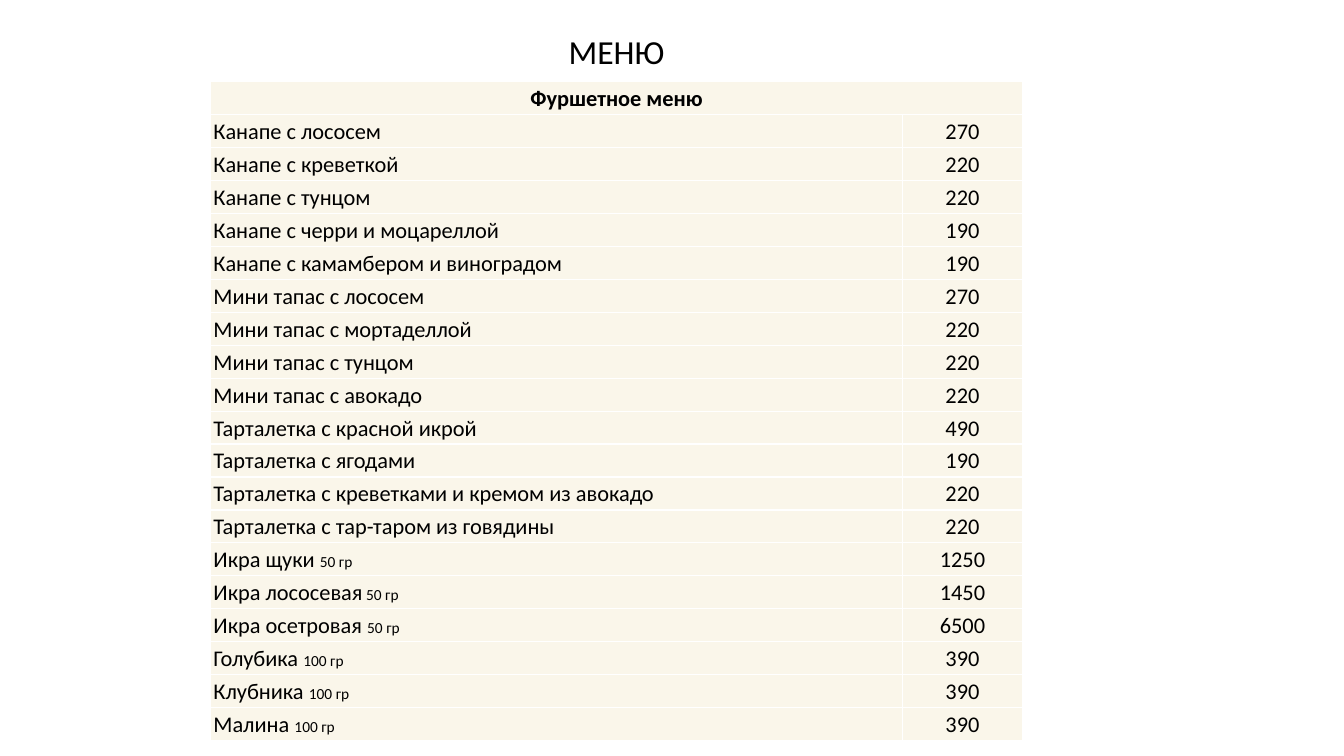
from lxml import etree
from pptx import Presentation
from pptx.dml.color import RGBColor
from pptx.enum.text import MSO_ANCHOR, MSO_AUTO_SIZE, PP_ALIGN
from pptx.oxml.ns import qn
from pptx.util import Cm, Pt

TITLE = "МЕНЮ"
HEADING = "Фуршетное меню"
DISHES = [
    ("Канапе с лососем", "", "270"),
    ("Канапе с креветкой", "", "220"),
    ("Канапе с тунцом", "", "220"),
    ("Канапе с черри и моцареллой", "", "190"),
    ("Канапе с камамбером и виноградом", "", "190"),
    ("Мини тапас с лососем", "", "270"),
    ("Мини тапас с мортаделлой", "", "220"),
    ("Мини тапас с тунцом", "", "220"),
    ("Мини тапас с авокадо", "", "220"),
    ("Тарталетка с красной икрой", "", "490"),
    ("Тарталетка с ягодами", "", "190"),
    ("Тарталетка с креветками и кремом из авокадо", "", "220"),
    ("Тарталетка с тар-таром из говядины", "", "220"),
    ("Икра щуки ", "50 гр", "1250"),
    ("Икра лососевая", " 50 гр", "1450"),
    ("Икра осетровая ", "50 гр", "6500"),
    ("Голубика ", "100 гр", "390"),
    ("Клубника ", "100 гр", "390"),
    ("Малина ", "100 гр", "390"),
]

FONT = "Calibri"
BLACK = RGBColor(0x00, 0x00, 0x00)
WHITE = RGBColor(0xFF, 0xFF, 0xFF)
CREAM = RGBColor(0xFA, 0xF6, 0xEA)
LEFT, CENTER = PP_ALIGN.LEFT, PP_ALIGN.CENTER
TOP, BOTTOM = MSO_ANCHOR.TOP, MSO_ANCHOR.BOTTOM
NO_AUTOFIT = MSO_AUTO_SIZE.NONE
TITLE_ONLY_LAYOUT = 5
COLUMN_WIDTHS = (Cm(17.43), Cm(3.03))
ROW_HEIGHT = Cm(0.83)


def add_run(paragraph, text, size, bold=False):
    run = paragraph.add_run()
    run.text = text
    run.font.name = FONT
    run.font.size = Pt(size)
    run.font.bold = bold
    run.font.color.rgb = BLACK


def add_borders(cell):
    properties = cell._tc.get_or_add_tcPr()
    for side in ("a:lnL", "a:lnR", "a:lnT", "a:lnB"):
        line = etree.SubElement(properties, qn(side), w=str(Pt(1)))
        fill = etree.SubElement(line, qn("a:solidFill"))
        etree.SubElement(fill, qn("a:srgbClr"), val=str(WHITE))


def fill_cell(cell, runs, alignment):
    cell.vertical_anchor = BOTTOM
    cell.margin_left = cell.margin_right = Cm(0.07)
    cell.margin_top = cell.margin_bottom = Cm(0.05)
    add_borders(cell)
    cell.fill.solid()
    cell.fill.fore_color.rgb = CREAM
    paragraph = cell.text_frame.paragraphs[0]
    paragraph.alignment = alignment
    for text, size, bold in runs:
        if text:
            add_run(paragraph, text, size, bold)


def add_title(slide):
    title = slide.shapes.title
    title.left, title.top, title.width, title.height = Cm(12.88), Cm(0.66), Cm(5.31), Cm(1.27)
    frame = title.text_frame
    frame.word_wrap = True
    frame.auto_size = NO_AUTOFIT
    frame.vertical_anchor = TOP
    paragraph = frame.paragraphs[0]
    paragraph.alignment = CENTER
    add_run(paragraph, TITLE, 24)


def add_menu(slide):
    row_count = len(DISHES) + 1
    table = slide.shapes.add_table(
        row_count, 2, Cm(5.31), Cm(2.06), sum(COLUMN_WIDTHS), ROW_HEIGHT * row_count
    ).table
    table.first_row = False
    table.horz_banding = False
    for column, width in zip(table.columns, COLUMN_WIDTHS):
        column.width = width
    for row in table.rows:
        row.height = ROW_HEIGHT
    table.cell(0, 0).merge(table.cell(0, 1))
    fill_cell(table.cell(0, 0), [(HEADING, 16, True)], CENTER)
    for index, (dish, portion, price) in enumerate(DISHES, start=1):
        fill_cell(table.cell(index, 0), [(dish, 16, False), (portion, 11, False)], LEFT)
        fill_cell(table.cell(index, 1), [(price, 16, False)], CENTER)


def main():
    presentation = Presentation()
    presentation.slide_width = Cm(33.87)
    presentation.slide_height = Cm(19.05)
    slide = presentation.slides.add_slide(presentation.slide_layouts[TITLE_ONLY_LAYOUT])
    add_title(slide)
    add_menu(slide)
    presentation.save("out.pptx")


if __name__ == "__main__":
    main()
